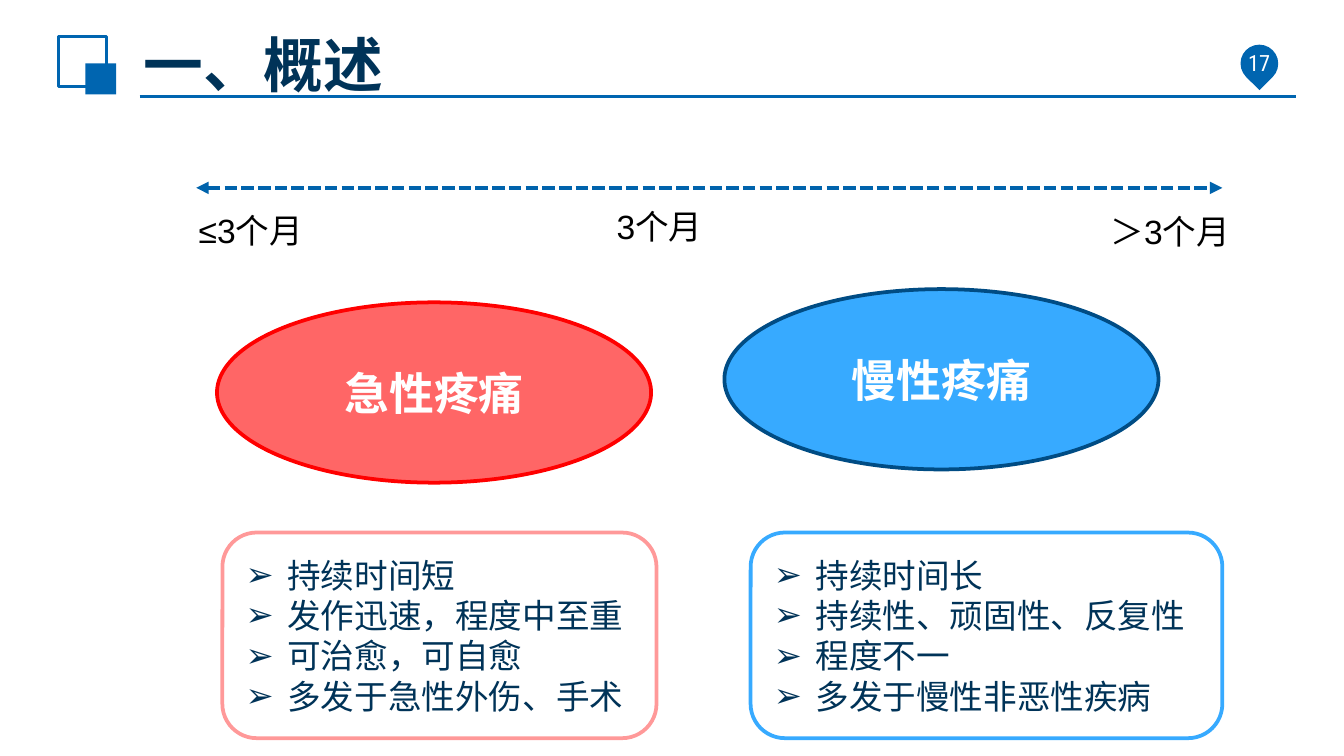
from pptx import Presentation
from pptx import util as u
from pptx.dml.color import RGBColor
from pptx.enum import dml, lang, shapes, text
from pptx.oxml.ns import qn
from lxml import etree

BLUE = RGBColor(0x00, 0x65, 0xB0)
ARROW = RGBColor(0x00, 0x63, 0xAC)
NAVY = RGBColor(0x00, 0x33, 0x58)
DEEP = RGBColor(0x00, 0x4C, 0x84)
SKY = RGBColor(0x37, 0xAA, 0xFF)
CORAL = RGBColor(0xFF, 0x66, 0x66)
RED = RGBColor(0xFF, 0x00, 0x00)
PINK = RGBColor(0xFF, 0x99, 0x99)
WHITE = RGBColor(0xFF, 0xFF, 0xFF)
BLACK = RGBColor(0x00, 0x00, 0x00)

prs = Presentation()
prs.slide_width = u.Inches(10)
prs.slide_height = prs.slide_width * 9 // 16
COL, ROW = prs.slide_width / 100, prs.slide_height / 100
s = prs.slides.add_slide(prs.slide_layouts[5])


def add(kind, x, y, w, h, fill=None, line=None, width=2):
    box = [int(v) for v in (x * COL, y * ROW, w * COL, h * ROW)]
    if kind is None:
        sp = s.shapes.add_textbox(*box)
        sp.text_frame.word_wrap = True
        return sp
    sp = s.shapes.add_shape(kind, *box)
    sp.shadow.inherit = False
    for part, color in ((sp.fill, fill), (sp.line.fill, line)):
        if color is None:
            part.background()
        else:
            part.solid()
            part.fore_color.rgb = color
    if line is not None:
        sp.line.width = u.Pt(width)
    return sp


def style(sp, size, color, bold=False, align=text.PP_ALIGN.LEFT, name="Arial"):
    for p in sp.text_frame.paragraphs:
        p.alignment = align
        for r in p.runs:
            f = r.font
            f.size, f.bold, f.name = u.Pt(size), bold, name
            f.color.rgb = color
            f.language_id = lang.MSO_LANGUAGE_ID.SIMPLIFIED_CHINESE


SHAPE = shapes.MSO_SHAPE
MIDDLE = text.MSO_ANCHOR.MIDDLE
CENTER = text.PP_ALIGN.CENTER

for x1, x2, y, color, width in ((10.4, 96.4, 12.75, BLUE, 1.25),
                                (14.6, 90.95, 24.85, ARROW, 2.25)):
    ln = s.shapes.add_connector(shapes.MSO_CONNECTOR.STRAIGHT, int(x1 * COL),
                                int(y * ROW), int(x2 * COL), int(y * ROW))
    ln.line.color.rgb = color
    ln.line.width = u.Pt(width)
    etree.SubElement(ln._element.spPr, qn("a:effectLst"))
ln.line.dash_style = dml.MSO_LINE.SQUARE_DOT
for end in ("a:headEnd", "a:tailEnd"):
    etree.SubElement(ln.line._get_or_add_ln(), qn(end), type="triangle")

add(SHAPE.RECTANGLE, 4.35, 4.8, 3.6, 6.6, line=BLUE, width=1.5)
add(SHAPE.RECTANGLE, 6.35, 8.4, 2.3, 4.1, fill=BLUE)
add(SHAPE.TEAR, 92.3, 5.9, 2.8, 5, fill=BLUE).rotation = 135
sp = add(None, 87, 5.35, 13.4, 5.9)
sp.text_frame.text = "17"
sp.text_frame.vertical_anchor = MIDDLE
style(sp, 12, WHITE, align=CENTER, name="Roboto Condensed")

sp = s.shapes.title
sp.left, sp.top = int(10 * COL), int(5.2 * ROW)
sp.width, sp.height = int(64.5 * COL), int(6.4 * ROW)
tf = sp.text_frame
tf.text = "一、概述"
tf.auto_size = text.MSO_AUTO_SIZE.NONE
tf.vertical_anchor = MIDDLE
tf.margin_left = tf.margin_right = u.Inches(0.07)
tf.margin_top = tf.margin_bottom = u.Inches(0.04)
style(sp, 32, NAVY, bold=True)

for x, y, w, label in ((13.8, 26.85, 10.2, "≤3个月"),
                       (44.9, 26.3, 10.2, "3个月"),
                       (81.65, 27, 11.7, "＞3个月")):
    sp = add(None, x, y, w, 7.1)
    sp.text_frame.text = label
    style(sp, 18, BLACK)

for x, y, fill, line, label in ((16.15, 40, CORAL, RED, "急性疼痛"),
                                (53.9, 38.25, SKY, DEEP, "慢性疼痛")):
    sp = add(SHAPE.OVAL, x, y, 32.3, 23.85, fill, line)
    sp.text_frame.text = label
    sp.text_frame.vertical_anchor = MIDDLE
    style(sp, 24, WHITE, bold=True, align=CENTER)

features = (
    (16.55, 32.3, PINK, ("持续时间短", "发作迅速，程度中至重",
                         "可治愈，可自愈", "多发于急性外伤、手术")),
    (55.85, 35.1, SKY, ("持续时间长", "持续性、顽固性、反复性",
                        "程度不一", "多发于慢性非恶性疾病")),
)
for x, w, line, items in features:
    sp = add(SHAPE.ROUNDED_RECTANGLE, x, 70.45, w, 27.2, line=line)
    tf = sp.text_frame
    tf.text = "\n".join(items)
    tf.vertical_anchor = MIDDLE
    for p in tf.paragraphs:
        pPr = p._p.get_or_add_pPr()
        pPr.set("marL", str(u.Inches(0.31)))
        pPr.set("indent", str(-u.Inches(0.31)))
        etree.SubElement(pPr, qn("a:buFont"), typeface="Arial")
        etree.SubElement(pPr, qn("a:buChar"), char="➢")
    style(sp, 18, NAVY)

prs.save("out.pptx")
